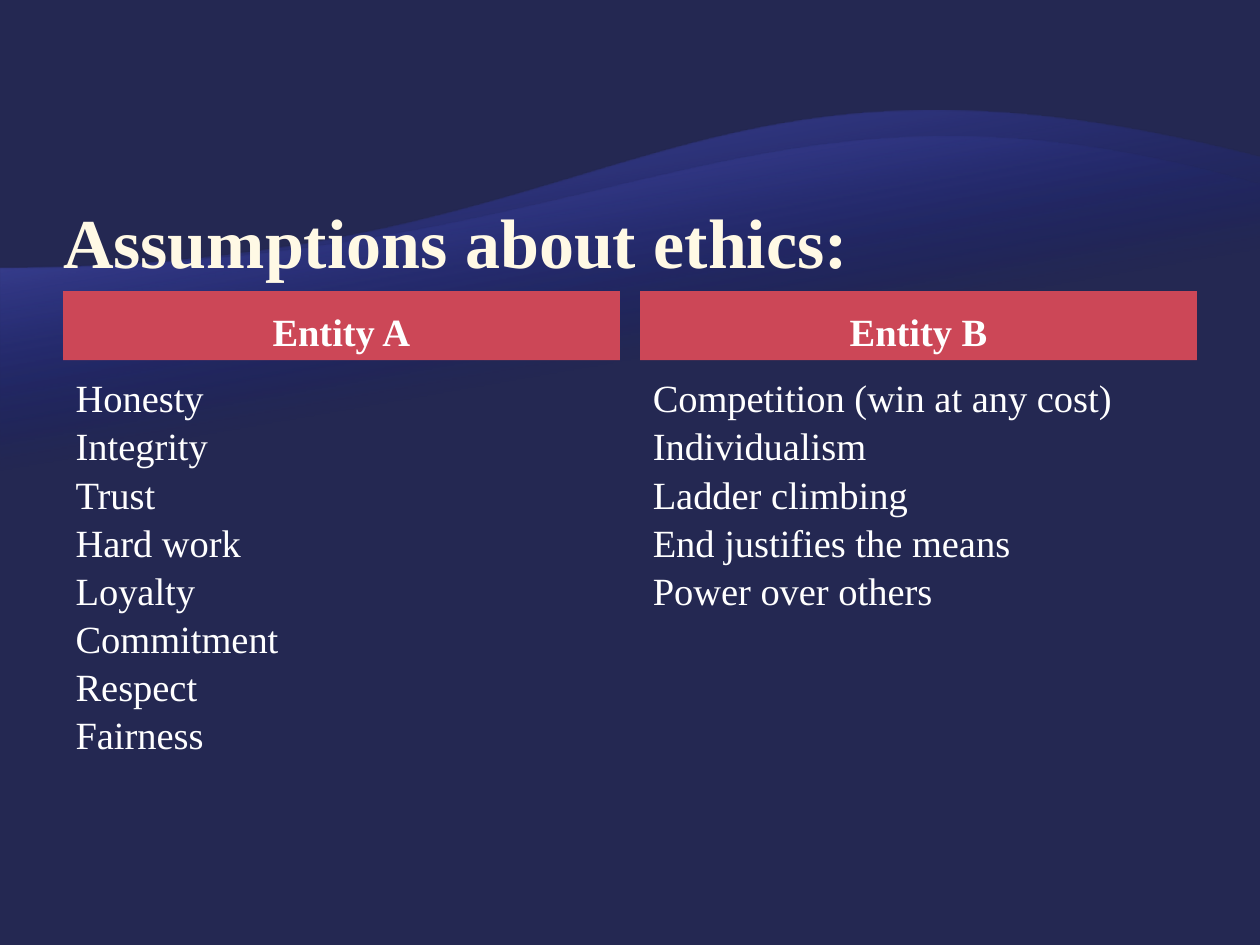
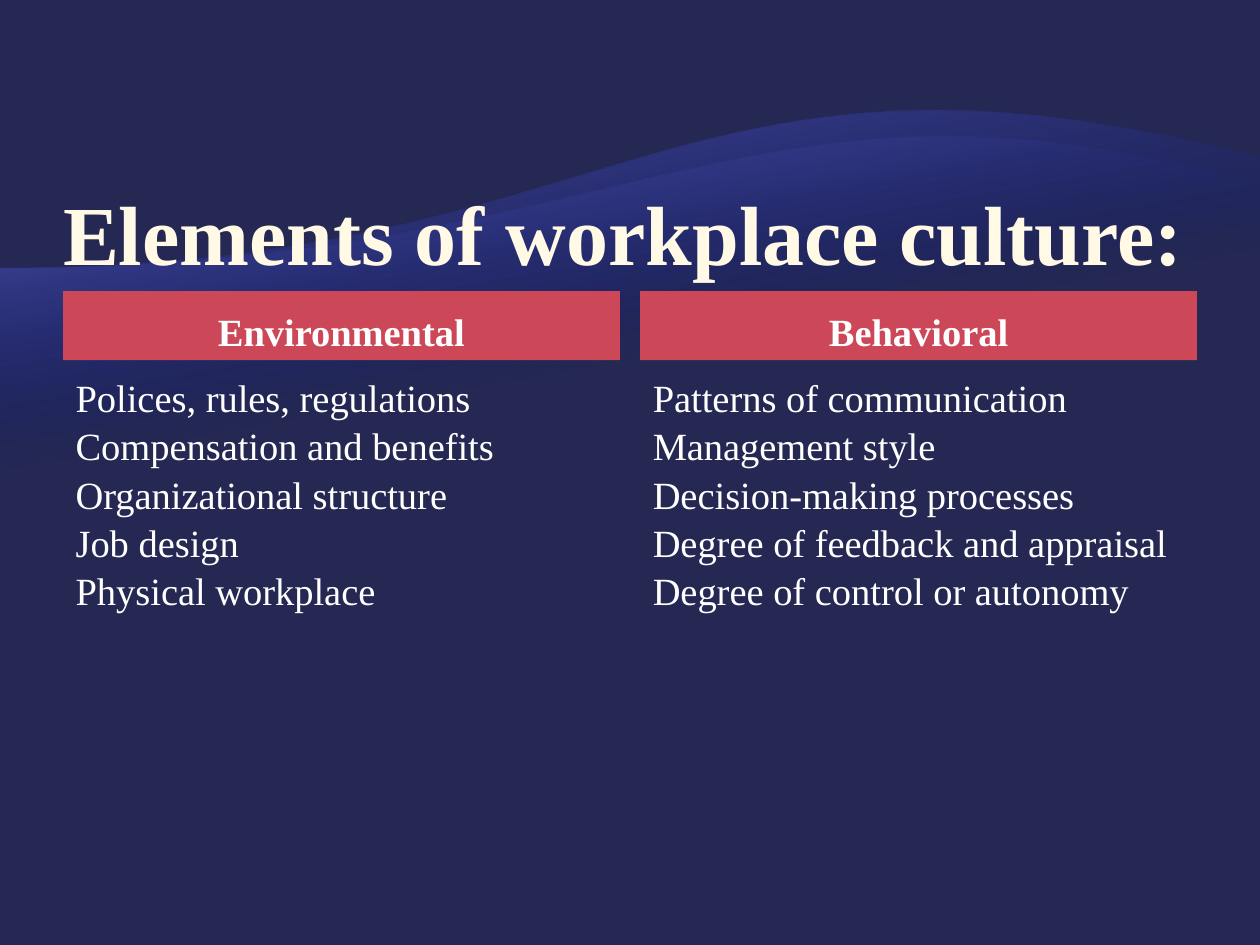
from lxml import etree
from pptx import Presentation
from pptx.dml.color import RGBColor
from pptx.enum.text import MSO_ANCHOR, MSO_AUTO_SIZE, PP_ALIGN
from pptx.oxml.ns import qn
from pptx.util import Cm, Pt

LEFT, CENTER = PP_ALIGN.LEFT, PP_ALIGN.CENTER
TOP, BOTTOM = MSO_ANCHOR.TOP, MSO_ANCHOR.BOTTOM
FIXED = MSO_AUTO_SIZE.NONE

WIDE, HIGH = 25.4, 19.05
FONT = "Times New Roman"
COLORS = {
    "ground": "242852",
    "title": "FFF9E5",
    "text": "FFFFFF",
    "band": "CC4757",
    "deep": "000D9E",
    "back": "797FFF",
    "front": "A3A7FF",
}
COMPARE = 4  # index of the comparison layout
HANG = 0.89
MARGIN, GAP = 1.27, 0.41

# Each wave: second control point, right end, foot, crest colour, opacity in %
WAVES = [
    ((13.56, 0.13), 3.18, 18.62, "back", 55),
    ((15.19, 0.79), 3.73, 16.18, "front", 30),
]

SLIDES = [
    ("Assumptions about ethics:", 40, [
        ("Entity A", ["Honesty", "Integrity", "Trust", "Hard work", "Loyalty",
                      "Commitment", "Respect", "Fairness"]),
        ("Entity B", ["Competition (win at any cost)", "Individualism",
                      "Ladder climbing", "End justifies the means",
                      "Power over others"]),
    ]),
    ("Elements of workplace culture:", 48, [
        ("Environmental", ["Polices, rules, regulations",
                           "Compensation and benefits",
                           "Organizational structure", "Job design",
                           "Physical workplace"]),
        ("Behavioral", ["Patterns of communication", "Management style",
                        "Decision-making processes",
                        "Degree of feedback and appraisal",
                        "Degree of control or autonomy"]),
    ]),
]


def color(name):
    return RGBColor.from_string(COLORS[name])


def place(shape, box):
    shape.left, shape.top, shape.width, shape.height = map(Cm, box)


def write(shape, lines, size, tint="text", bold=False, align=LEFT,
          anchor=TOP, before=0, hang=0):
    """Fill a placeholder with one unbulleted paragraph per line."""
    frame = shape.text_frame
    frame.auto_size, frame.word_wrap = FIXED, True
    frame.vertical_anchor = anchor
    for i, line in enumerate(lines):
        para = frame.add_paragraph() if i else frame.paragraphs[0]
        para.alignment = align
        para.space_before = Pt(before)
        props = para._p.get_or_add_pPr()
        props.set("marL", str(Cm(hang)))
        props.set("indent", str(-Cm(hang)))
        etree.SubElement(props, qn("a:buNone"))
        run = para.add_run()
        run.text = line
        font = run.font
        font.name, font.size, font.bold = FONT, Pt(size), bold
        font.color.rgb = color(tint)


def curve(start, pull, push, end, steps=60):
    """Points along a cubic curve, in centimetres."""
    for i in range(1, steps + 1):
        t = i / steps
        u = 1 - t
        yield tuple(u**3 * a + 3 * u * u * t * b + 3 * u * t * t * c + t**3 * d
                    for a, b, c, d in zip(start, pull, push, end))


def add_wave(slide, box, push, end, foot, crest, alpha):
    left, top, width, _ = box
    rise = 5.41
    points = [(0, rise),
              *curve((0, rise), (width / 2, rise), push, (width, end)),
              (width, foot), (0, foot)]
    spots = [(Cm(left + x), Cm(top + y)) for x, y in points]
    pen = slide.shapes.build_freeform(*spots[0], scale=1.0)
    pen.add_line_segments(spots[1:], close=True)
    wave = pen.convert_to_shape()
    wave.shadow.inherit = False
    wave.line.fill.background()
    wave.fill.gradient()
    wave.fill.gradient_angle = 100
    looks = [(0.65, "deep", 0), (1, crest, alpha)]
    for stop, (spot, tint, _) in zip(wave.fill.gradient_stops, looks):
        stop.position = spot
        stop.color.rgb = color(tint)
    for node, (_, _, clear) in zip(wave._element.iter(qn("a:srgbClr")), looks):
        etree.SubElement(node, qn("a:alpha"), val=str(clear * 1000))
    return wave


def dress_master(master, slide):
    """Set the ground and move the waves, drawn on a slide, to the master."""
    fill = master.background.fill
    fill.solid()
    fill.fore_color.rgb = color("ground")
    tree = master.shapes._spTree
    for i, wave in enumerate(WAVES):
        shape = add_wave(slide, (0, 0, WIDE, HIGH), *wave)
        tree.insert(2 + i, shape._element)


def add_title(shape, box, text, size):
    place(shape, box)
    frame = shape.text_frame
    frame.margin_left = frame.margin_right = 0
    frame.margin_top = frame.margin_bottom = Cm(0.03)
    write(shape, [text], size, "title", bold=True, anchor=BOTTOM)


def add_column(head, body, box, name, items):
    left, top, width, height = box
    band, skip = 1.39, 1.55
    place(head, (left, top, width, band))
    head.fill.solid()
    head.fill.fore_color.rgb = color("band")
    write(head, [name], 22, bold=True, align=CENTER, anchor=BOTTOM, before=4.4)
    place(body, (left, top + skip, width, height - skip))
    write(body, items, 22, before=1.1, hang=HANG)


def fill_slide(slide, box, title, size, columns):
    left, top, width, height = box
    heading, *parts = slide.placeholders
    add_title(heading, (left, top, width, 3.18), title, size)
    span = (width - GAP) / 2
    drop = 3.33
    for i, (name, items) in enumerate(columns):
        area = (left + i * (span + GAP), top + drop, span, height - drop)
        add_column(*parts[2 * i:2 * i + 2], area, name, items)


def main():
    prs = Presentation()
    prs.slide_width, prs.slide_height = Cm(WIDE), Cm(HIGH)
    box = (MARGIN, 2.54, WIDE - 2 * MARGIN, 15.04)
    for content in SLIDES:
        slide = prs.slides.add_slide(prs.slide_layouts[COMPARE])
        fill_slide(slide, box, *content)
    dress_master(prs.slide_master, slide)
    prs.save("out.pptx")


if __name__ == "__main__":
    main()
